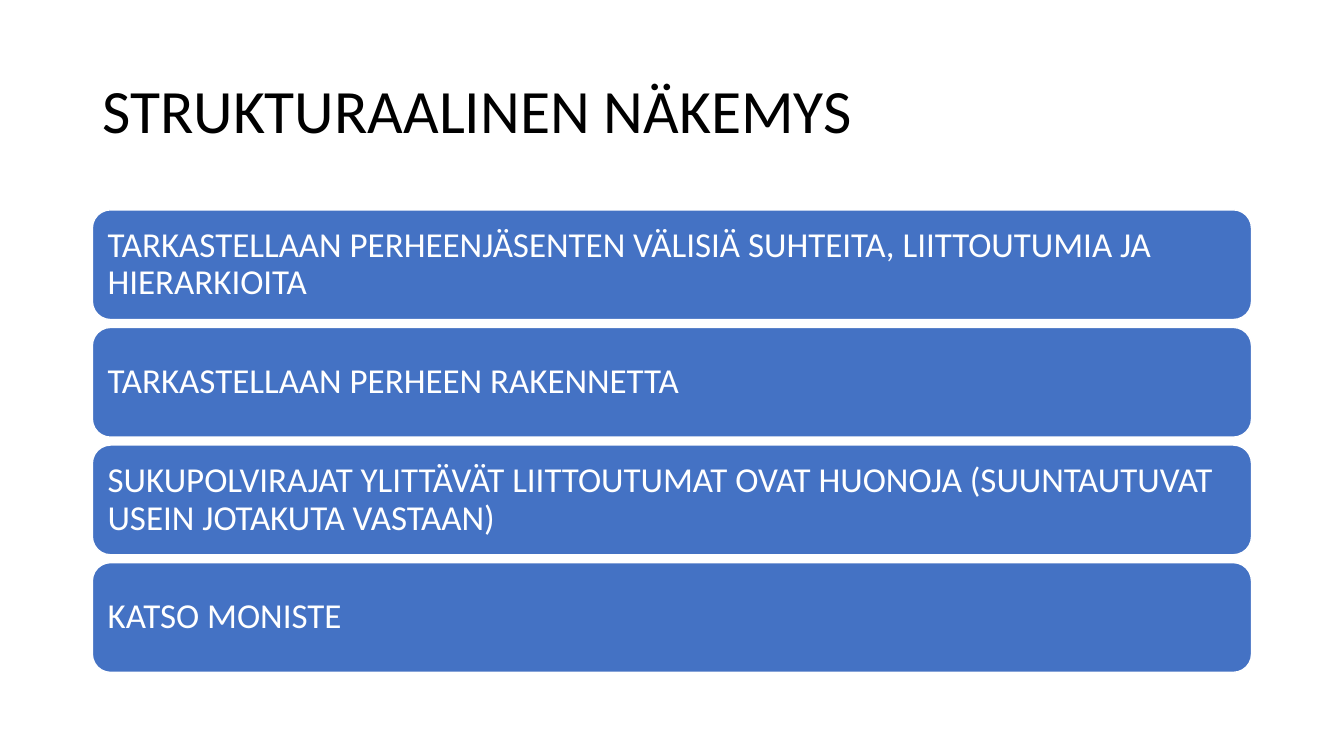
from pptx import Presentation
from pptx.dml.color import RGBColor
from pptx.enum.shapes import MSO_SHAPE as Shape
from pptx.enum.text import MSO_ANCHOR as Anchor, PP_ALIGN as Align
from pptx.util import Pt

TITLE = "STRUKTURAALINEN NÄKEMYS"
POINTS = [
    "TARKASTELLAAN PERHEENJÄSENTEN VÄLISIÄ SUHTEITA, LIITTOUTUMIA JA HIERARKIOITA",
    "TARKASTELLAAN PERHEEN RAKENNETTA",
    "SUKUPOLVIRAJAT YLITTÄVÄT LIITTOUTUMAT OVAT HUONOJA "
    "(SUUNTAUTUVAT USEIN JOTAKUTA VASTAAN)",
    "KATSO MONISTE",
]
COLORS = {"title": "000000", "bar": "4472C4", "bar_text": "FFFFFF", "outline": "FFFFFF"}
FONT = "Calibri"

LEFT, WIDTH = 66, 828
TITLE_TOP, TITLE_HEIGHT = 28.75, 104.4
BARS_TOP, BAR_HEIGHT, BAR_GAP = 149.9, 78.4, 5.6


def rgb(name):
    return RGBColor.from_string(COLORS[name])


def write(shape, text, *, size, color, inset_y=3.6):
    frame = shape.text_frame
    frame.word_wrap = True
    frame.vertical_anchor = Anchor.MIDDLE
    frame.margin_left = frame.margin_right = Pt(7.2)
    frame.margin_top = frame.margin_bottom = Pt(inset_y)
    paragraph = frame.paragraphs[0]
    paragraph.alignment = Align.LEFT
    paragraph.line_spacing = 0.9
    run = paragraph.add_run()
    run.text = text
    run.font.name = FONT
    run.font.size = Pt(size)
    run.font.color.rgb = rgb(color)


def add_bar(slide, top, text):
    bar = slide.shapes.add_shape(
        Shape.ROUNDED_RECTANGLE, Pt(LEFT), Pt(top), Pt(WIDTH), Pt(BAR_HEIGHT))
    bar.shadow.inherit = False
    bar.fill.solid()
    bar.fill.fore_color.rgb = rgb("bar")
    bar.line.color.rgb = rgb("outline")
    bar.line.width = Pt(1)
    write(bar, text, size=25, color="bar_text", inset_y=7.2)


def main():
    deck = Presentation()
    deck.slide_width, deck.slide_height = Pt(960), Pt(540)
    slide = deck.slides.add_slide(deck.slide_layouts[6])

    title = slide.shapes.add_textbox(Pt(LEFT), Pt(TITLE_TOP), Pt(WIDTH), Pt(TITLE_HEIGHT))
    write(title, TITLE, size=44, color="title")

    for index, point in enumerate(POINTS):
        add_bar(slide, BARS_TOP + index * (BAR_HEIGHT + BAR_GAP), point)

    deck.save("out.pptx")


if __name__ == "__main__":
    main()
